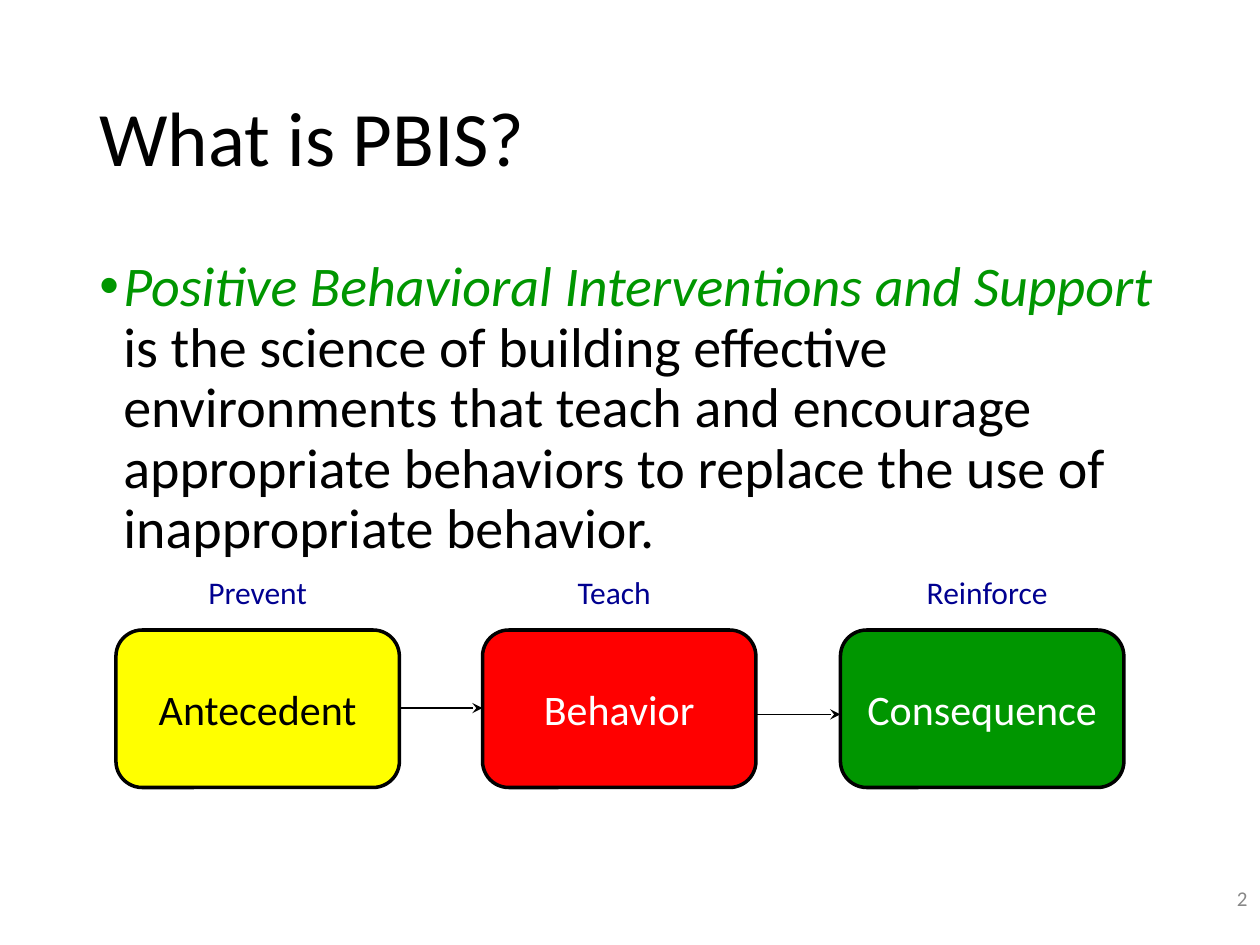
from lxml import etree
from pptx import Presentation
from pptx.dml.color import RGBColor
from pptx.enum.shapes import MSO_CONNECTOR, MSO_SHAPE
from pptx.enum.text import MSO_ANCHOR, PP_ALIGN
from pptx.oxml.ns import qn
from pptx.util import Inches, Pt

BLACK = RGBColor(0x00, 0x00, 0x00)
WHITE = RGBColor(0xFF, 0xFF, 0xFF)
YELLOW = RGBColor(0xFF, 0xFF, 0x00)
RED = RGBColor(0xFF, 0x00, 0x00)
GREEN = RGBColor(0x00, 0x96, 0x00)
NAVY = RGBColor(0x00, 0x00, 0x90)
GRAY = RGBColor(0x88, 0x88, 0x88)
LEFT, CENTER, RIGHT = PP_ALIGN.LEFT, PP_ALIGN.CENTER, PP_ALIGN.RIGHT
TOP, MIDDLE = MSO_ANCHOR.TOP, MSO_ANCHOR.MIDDLE
ROUNDED = MSO_SHAPE.ROUNDED_RECTANGLE
STRAIGHT = MSO_CONNECTOR.STRAIGHT


class SlideBuilder:
    font = "Calibri"

    def __init__(self, slide):
        self.slide = slide

    def add_runs(self, frame, runs, size, align, anchor):
        frame.word_wrap = True
        frame.vertical_anchor = anchor
        paragraph = frame.paragraphs[0]
        paragraph.alignment = align
        for words, color, italic in runs:
            run = paragraph.add_run()
            run.text = words
            run.font.name = self.font
            run.font.size = Pt(size)
            run.font.color.rgb = color
            run.font.italic = italic
        return paragraph

    def text(self, box, runs, size, align=LEFT, anchor=TOP, spacing=1.0):
        area = self.slide.shapes.add_textbox(*map(Inches, box))
        paragraph = self.add_runs(area.text_frame, runs, size, align, anchor)
        paragraph.line_spacing = spacing
        return paragraph

    def bullet(self, box, runs, size, color):
        paragraph = self.text(box, runs, size, spacing=0.9)
        properties = paragraph._p.get_or_add_pPr()
        indent = Inches(0.19)
        properties.set("marL", str(indent))
        properties.set("indent", str(-indent))
        bullet_color = etree.SubElement(properties, qn("a:buClr"))
        etree.SubElement(bullet_color, qn("a:srgbClr"), val=str(color))
        etree.SubElement(properties, qn("a:buFont"), typeface="Arial")
        etree.SubElement(properties, qn("a:buChar"), char="•")

    def stage(self, box, name, fill, color):
        card = self.slide.shapes.add_shape(ROUNDED, *map(Inches, box))
        card.shadow.inherit = False
        card.fill.solid()
        card.fill.fore_color.rgb = fill
        card.line.color.rgb = BLACK
        card.line.width = Pt(2)
        self.add_runs(card.text_frame, [(name, color, False)], 24, CENTER, MIDDLE)

    def arrow(self, start, end, y):
        link = self.slide.shapes.add_connector(
            STRAIGHT, Inches(start), Inches(y), Inches(end), Inches(y))
        link.line.color.rgb = BLACK
        link.line.width = Pt(0.75)
        properties = link._element.spPr
        etree.SubElement(properties.find(qn("a:ln")), qn("a:tailEnd"), type="stealth")
        etree.SubElement(properties, qn("a:effectLst"))


def main():
    deck = Presentation()
    deck.slide_width, deck.slide_height = Inches(10), Inches(7.5)
    builder = SlideBuilder(deck.slides.add_slide(deck.slide_layouts[6]))

    builder.text((0.69, 0.4, 8.62, 1.45), [("What is PBIS?", BLACK, False)],
                 44, anchor=MIDDLE, spacing=0.9)
    definition = [
        ("Positive Behavioral Interventions and Support ", GREEN, True),
        ("is the science of building effective environments that teach and "
         "encourage appropriate behaviors to replace the use of "
         "inappropriate behavior.", BLACK, False),
    ]
    builder.bullet((0.69, 2, 8.62, 4.76), definition, 32, GREEN)
    builder.text((7.92, 6.92, 2.08, 0.42), [("2", GRAY, False)], 12, RIGHT, MIDDLE)

    stages = [
        ("Antecedent", 0.92, 2.25, YELLOW, BLACK),
        ("Behavior", 3.83, 2.17, RED, WHITE),
        ("Consequence", 6.67, 2.25, GREEN, WHITE),
    ]
    for name, left, width, fill, color in stages:
        builder.stage((left, 5, width, 1.25), name, fill, color)

    for before, after, y in zip(stages, stages[1:], (5.62, 5.67)):
        builder.arrow(before[1] + before[2], after[1], y)

    strategies = [("Prevent", 0.92, 2.25), ("Teach", 3.75, 2.25),
                  ("Reinforce", 6.67, 2.33)]
    for strategy, left, width in strategies:
        builder.text((left, 4.5, width, 0.5), [(strategy, NAVY, False)], 18, CENTER)

    deck.save("out.pptx")


if __name__ == "__main__":
    main()
